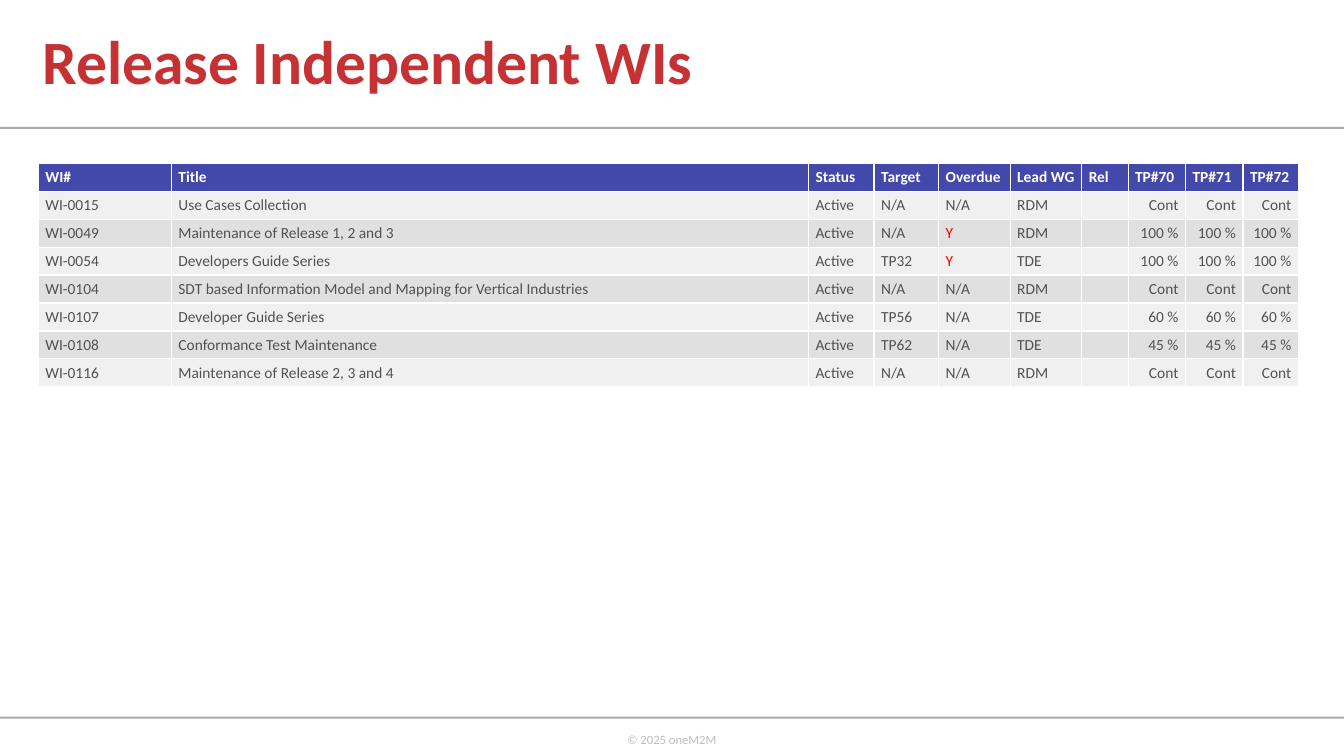
import pptx
import pptx.util
import pptx.dml.color
import pptx.enum.shapes
import pptx.enum.text
from lxml import etree

# Content
TITLE = "Release Independent WIs"
COPYRIGHT = "© 2025 oneM2M"
HEADINGS = ["WI#", "Title", "Status", "Target", "Overdue", "Lead WG", "Rel",
            "TP#70", "TP#71", "TP#72"]
WORK_ITEMS = [
    ("WI-0015", "Use Cases Collection", "Active", "N/A", "N/A", "RDM", "", "Cont", "Cont", "Cont"),
    ("WI-0049", "Maintenance of Release 1, 2 and 3", "Active", "N/A", "Y", "RDM", "",
     "100 %", "100 %", "100 %"),
    ("WI-0054", "Developers Guide Series", "Active", "TP32", "Y", "TDE", "",
     "100 %", "100 %", "100 %"),
    ("WI-0104", "SDT based Information Model and Mapping for Vertical Industries",
     "Active", "N/A", "N/A", "RDM", "", "Cont", "Cont", "Cont"),
    ("WI-0107", "Developer Guide Series", "Active", "TP56", "N/A", "TDE", "",
     "60 %", "60 %", "60 %"),
    ("WI-0108", "Conformance Test Maintenance", "Active", "TP62", "N/A", "TDE", "",
     "45 %", "45 %", "45 %"),
    ("WI-0116", "Maintenance of Release 2, 3 and 4", "Active", "N/A", "N/A", "RDM", "",
     "Cont", "Cont", "Cont"),
]
COLUMNS = [1.32, 6.32, 0.65, 0.64, 0.71, 0.71, 0.46, 0.57, 0.57, 0.55]
FIRST_PROGRESS = HEADINGS.index("TP#70")
OVERDUE = HEADINGS.index("Overdue")
COLORS = {"title": "C63133", "rule": "A7A9AC", "copyright": "BFBFBF", "heading": "4349AA",
          "white": "FFFFFF", "text": "545054", "late": "FF0000",
          "odd": "F0F0F0", "even": "E0E0E0"}
FONT = "Calibri"
WIDTH, HEIGHT = 13.33, 7.5
ROW_HEIGHT = 2.22 / (len(WORK_ITEMS) + 1)

Inches, Pt = pptx.util.Inches, pptx.util.Pt
Align, Anchor = pptx.enum.text.PP_ALIGN, pptx.enum.text.MSO_ANCHOR


def rgb(name):
    return pptx.dml.color.RGBColor.from_string(COLORS[name])


def style(paragraph, size, color, bold=False):
    for run in paragraph.runs:
        run.font.name, run.font.size, run.font.bold = FONT, Pt(size), bold
        run.font.color.rgb = rgb(color)


def add_label(slide, box, text, size, color, bold=False, wrap=True):
    frame = slide.shapes.add_textbox(*map(Inches, box)).text_frame
    frame.margin_left = frame.margin_right = Inches(0.05)
    frame.margin_top = frame.margin_bottom = Inches(0.05)
    frame.word_wrap = wrap
    frame.text = text
    style(frame.paragraphs[0], size, color, bold)
    return frame


def add_borders(cell):
    properties = cell._tc.get_or_add_tcPr()
    ns = "{http://schemas.openxmlformats.org/drawingml/2006/main}"
    for position, side in enumerate(("lnL", "lnR", "lnT", "lnB")):
        line = etree.Element(ns + side, w=str(Pt(1)))
        fill = etree.SubElement(line, ns + "solidFill")
        etree.SubElement(fill, ns + "srgbClr", val=COLORS["white"])
        properties.insert(position, line)


def fill_cell(cell, text, row, column):
    cell.margin_left = cell.margin_right = Inches(0.07)
    cell.margin_top = cell.margin_bottom = 0
    cell.vertical_anchor = Anchor.MIDDLE
    cell.fill.solid()
    cell.fill.fore_color.rgb = rgb("heading" if row == 0 else "odd" if row % 2 else "even")
    cell.text = text
    paragraph = cell.text_frame.paragraphs[0]
    if row and column >= FIRST_PROGRESS:
        paragraph.alignment = Align.RIGHT
    late = column == OVERDUE and text == "Y"
    style(paragraph, 11, "white" if row == 0 else "late" if late else "text", row == 0)
    if not text:  # keeps an empty cell from stretching its row
        paragraph._p.get_or_add_endParaRPr().set("sz", "1100")
    add_borders(cell)


presentation = pptx.Presentation()
presentation.slide_width, presentation.slide_height = Inches(WIDTH), Inches(HEIGHT)
slide = presentation.slides.add_slide(presentation.slide_layouts[6])

# Rules under the title and above the footer
for top in (1.26, 7.11):
    rule = slide.shapes.add_shape(pptx.enum.shapes.MSO_SHAPE.RECTANGLE,
                                  0, Inches(top), Inches(WIDTH), Inches(0.02))
    rule.shadow.inherit = False
    rule.fill.solid()
    rule.fill.fore_color.rgb = rgb("rule")
    rule.line.fill.background()

# Footer and title
footer = add_label(slide, (6.17, 7.21, 1.02, 0.25), COPYRIGHT, 9, "copyright", wrap=False)
footer.auto_size = pptx.enum.text.MSO_AUTO_SIZE.SHAPE_TO_FIT_TEXT
heading = add_label(slide, (0.37, 0, 8.59, 1.28), TITLE, 44, "title", bold=True)
heading.vertical_anchor = Anchor.MIDDLE
heading.paragraphs[0].line_spacing = 0.9

# Work item table
rows = [HEADINGS, *WORK_ITEMS]
table = slide.shapes.add_table(len(rows), len(COLUMNS), Inches(0.38), Inches(1.62),
                               Inches(sum(COLUMNS)), Inches(ROW_HEIGHT * len(rows))).table
for column, width in zip(table.columns, COLUMNS):
    column.width = Inches(width)
for r, values in enumerate(rows):
    table.rows[r].height = Inches(ROW_HEIGHT)
    for c, value in enumerate(values):
        fill_cell(table.cell(r, c), value, r, c)

presentation.save("out.pptx")
